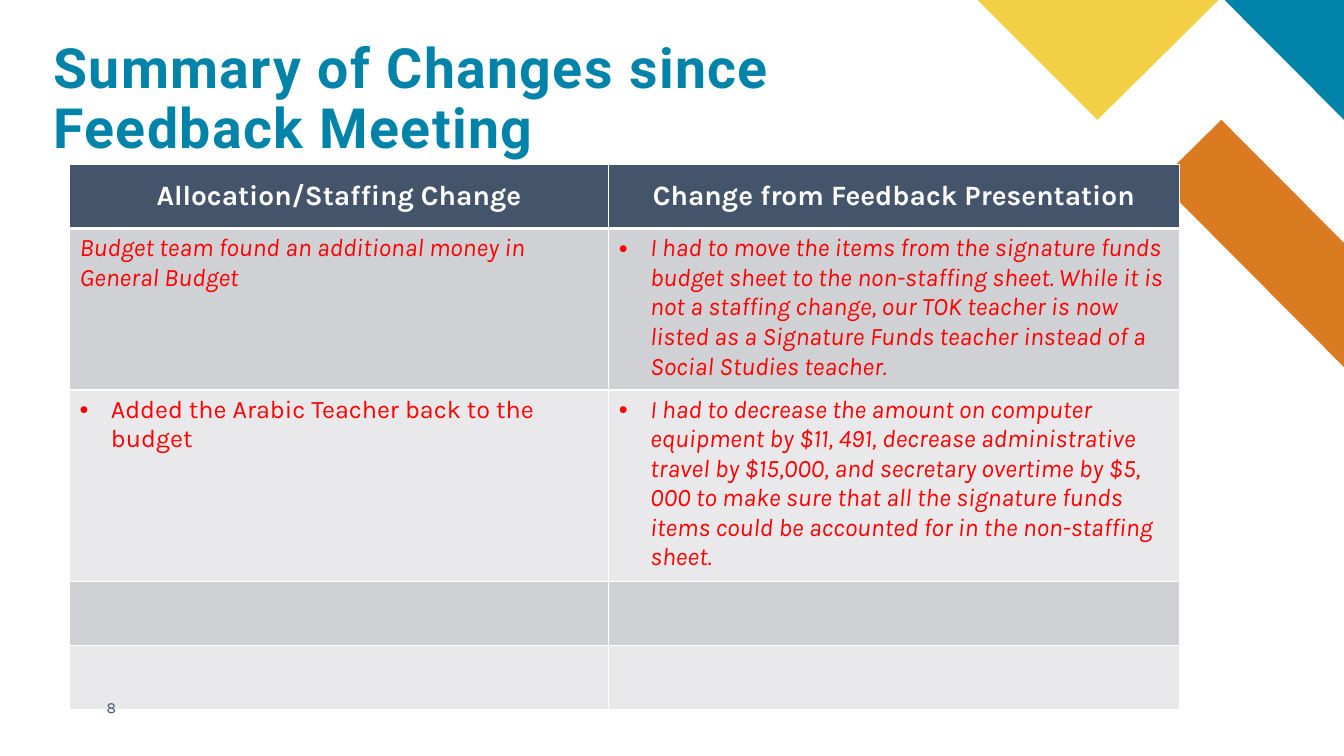
from lxml import etree
from pptx import Presentation
from pptx.dml.color import RGBColor
from pptx.enum.text import MSO_ANCHOR, PP_ALIGN
from pptx.oxml.ns import qn
from pptx.util import Cm, Pt

CENTER, LEFT = PP_ALIGN.CENTER, PP_ALIGN.LEFT
TOP, MIDDLE, BOTTOM = MSO_ANCHOR.TOP, MSO_ANCHOR.MIDDLE, MSO_ANCHOR.BOTTOM

# Content
TITLE = "Summary of Changes since Feedback Meeting"
PAGE_NUMBER = "8"
HEADINGS = ["Allocation/Staffing Change", "Change from Feedback Presentation"]
# Each cell: text, italic, bullet
CHANGES = [
    [("Budget team found an additional money in General Budget", True, False),
     ("I had to move the items from the signature funds budget sheet to the "
      "non-staffing sheet. While it is not a staffing change, our TOK teacher is now "
      "listed as a Signature Funds teacher instead of a Social Studies teacher.",
      True, True)],
    [("Added the Arabic Teacher back to the budget", False, True),
     ("I had to decrease the amount on computer equipment by $11, 491, decrease "
      "administrative travel by $15,000, and secretary overtime by $5, 000 to make "
      "sure that all the signature funds items could be accounted for in the "
      "non-staffing sheet.", True, True)],
    [("", False, False)] * 2,
    [("", False, False)] * 2,
]

# Colours and measures in centimetres
TEAL, SLATE, RED, WHITE = "0083A9", "44546A", "FF0000", "FFFFFF"
BANDS = ["CFD1D4", "E9E9EB"]
COLUMN_WIDTHS = [13.59, 14.38]
ROW_HEIGHTS = [1.62, 1.8, 1.8, 1.62, 1.62]  # the text rows grow with their text
TABLE_HEIGHT = 13.74
CORNER_SHAPES = [
    ("DA7B22", [(33.87, 9.25), (33.87, 6.12), (30.78, 3.02), (29.21, 4.57)]),
    (TEAL, [(33.87, 3.02), (33.87, 0), (30.86, 0)]),
    ("F3CF45", [(24.64, 0), (27.66, 3.02), (30.71, 0)]),
]


def color(value):
    return RGBColor.from_string(value)


def write(frame, text, size, ink, font="Karla", bold=False, italic=False,
          align=LEFT, line_spacing=None, tracking=None, bullet=False):
    para = frame.paragraphs[0]
    para.alignment = align
    para.line_spacing = line_spacing
    if bullet:
        settings = para._p.get_or_add_pPr()
        settings.set("marL", str(Cm(0.79)))
        settings.set("indent", str(-Cm(0.79)))
        etree.SubElement(settings, qn("a:buFont"), typeface="Arial")
        etree.SubElement(settings, qn("a:buChar"), char="•")
    span = para.add_run()
    span.text = text
    span.font.name, span.font.size = font, Pt(size)
    span.font.bold, span.font.italic = bold, italic
    span.font.color.rgb = color(ink)
    if tracking:
        span.font._element.set("spc", str(tracking * 100))


def add_text(page, left, top, width, height, text, size, ink, anchor=TOP, **style):
    box = page.shapes.add_textbox(Cm(left), Cm(top), Cm(width), Cm(height))
    frame = box.text_frame
    frame.word_wrap = True
    frame.vertical_anchor = anchor
    frame.margin_left = frame.margin_right = frame.margin_top = frame.margin_bottom = 0
    write(frame, text, size, ink, **style)


def add_polygon(page, points, fill):
    # The builder rounds its points, so they are given in EMU
    corners = [(Cm(x), Cm(y)) for x, y in points]
    builder = page.shapes.build_freeform(*corners[0])
    builder.add_line_segments(corners[1:], close=True)
    shape = builder.convert_to_shape()
    shape.shadow.inherit = False
    shape.fill.solid()
    shape.fill.fore_color.rgb = color(fill)
    shape.line.fill.background()


def paint_cell(cell, fill, top=1, bottom=1):
    cell.fill.solid()
    cell.fill.fore_color.rgb = color(fill)
    settings = cell._tc.get_or_add_tcPr()
    borders = [("L", 1), ("R", 1), ("T", top), ("B", bottom)]
    for position, (side, width) in enumerate(borders):
        line = etree.Element(qn(f"a:ln{side}"), w=str(Pt(width)))
        paint = etree.SubElement(line, qn("a:solidFill"))
        etree.SubElement(paint, qn("a:srgbClr"), val=WHITE)
        settings.insert(position, line)


def add_changes_table(page):
    frame = page.shapes.add_table(
        len(ROW_HEIGHTS), len(COLUMN_WIDTHS), Cm(1.75), Cm(4.14),
        Cm(sum(COLUMN_WIDTHS)), Cm(TABLE_HEIGHT))
    table = frame.table
    for column, width in zip(table.columns, COLUMN_WIDTHS):
        column.width = Cm(width)
    for row, height in zip(table.rows, ROW_HEIGHTS):
        row.height = Cm(height)
    frame.height = Cm(TABLE_HEIGHT)

    for cell, heading in zip(table.rows[0].cells, HEADINGS):
        paint_cell(cell, SLATE, bottom=3)
        cell.vertical_anchor = MIDDLE
        write(cell.text_frame, heading, 20, WHITE, bold=True, align=CENTER)

    for index, entries in enumerate(CHANGES):
        for cell, (text, italic, bullet) in zip(table.rows[index + 1].cells, entries):
            paint_cell(cell, BANDS[index % 2], top=1 if index else 3)
            if text:
                write(cell.text_frame, text, 18, RED, italic=italic, bullet=bullet)


def main():
    deck = Presentation()
    deck.slide_width, deck.slide_height = Cm(33.87), Cm(19.05)
    page = deck.slides.add_slide(deck.slide_layouts[6])

    # Corner decoration
    for fill, points in CORNER_SHAPES:
        add_polygon(page, points, fill)

    # Title and table, with the page number in front
    add_text(page, 1.35, 1.14, 22.94, 2.9, TITLE, 39.6, TEAL, anchor=BOTTOM,
             font="Roboto", bold=True, line_spacing=0.9, tracking=1)
    add_changes_table(page)
    add_text(page, 2.69, 17.58, 1.45, 0.69, PAGE_NUMBER, 11, SLATE)

    deck.save("out.pptx")


if __name__ == "__main__":
    main()
